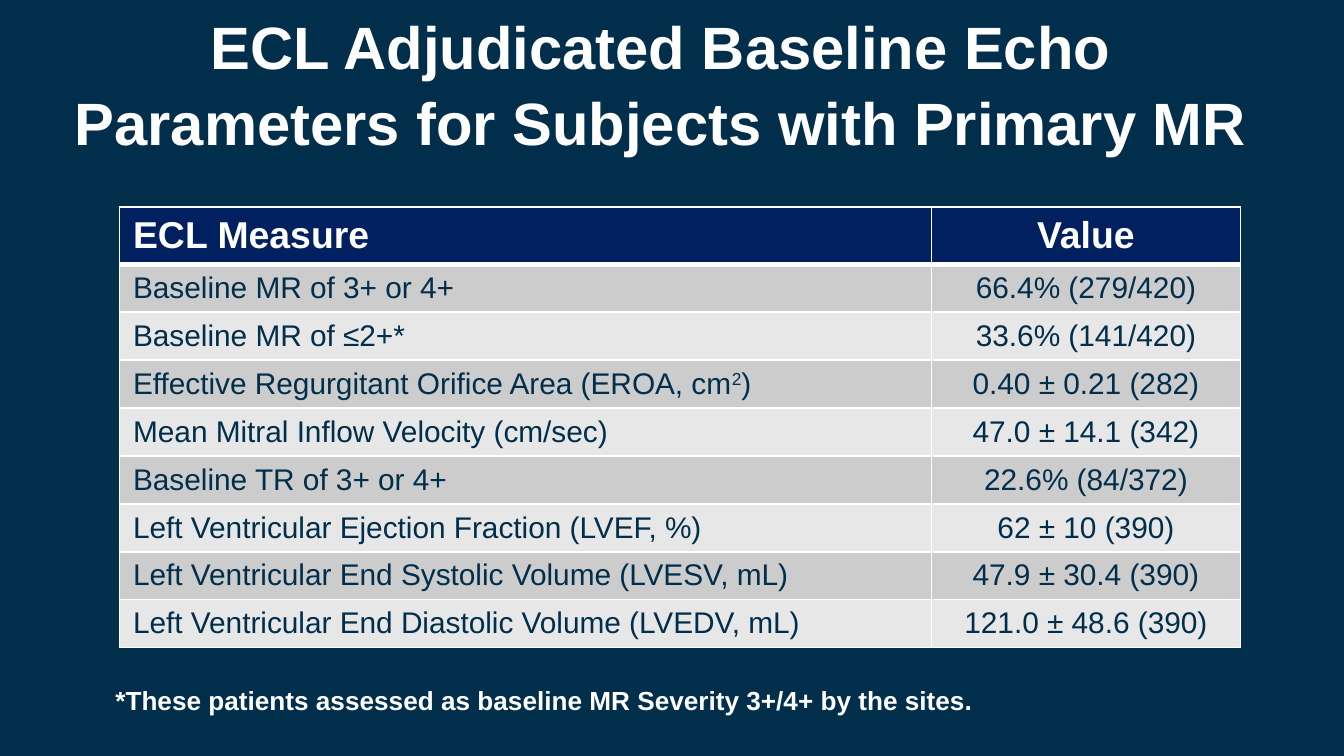
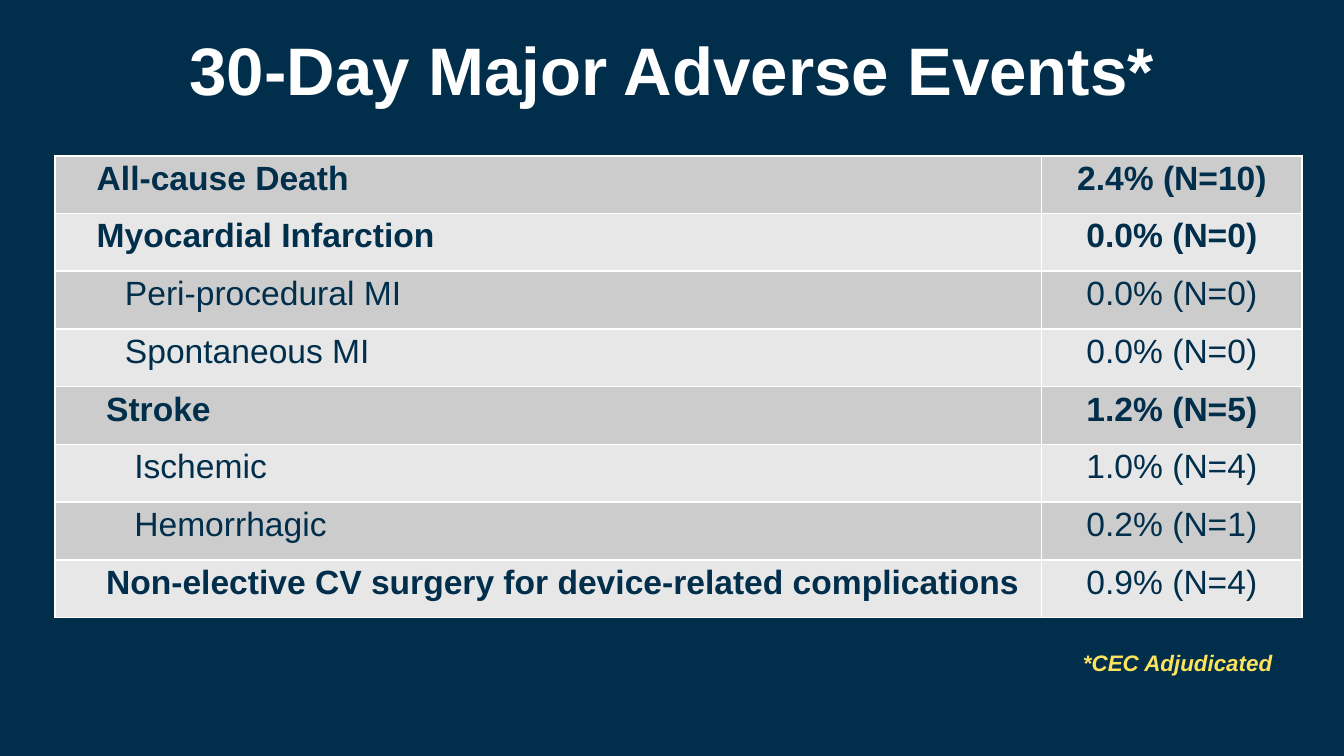
from dataclasses import dataclass
from lxml.etree import SubElement
from pptx import Presentation
from pptx.dml.color import RGBColor
from pptx.enum.text import MSO_ANCHOR, PP_ALIGN
from pptx.oxml.ns import qn
from pptx.util import Inches, Pt


@dataclass(frozen=True)
class Theme:
    """Colours, type sizes and slide size of the deck."""
    wide: float = 10
    high: float = 5.625
    face: str = "Arial"
    navy: str = "002E4B"
    head: str = "002060"
    white: str = "FFFFFF"
    gold: str = "FDE25E"
    bands: tuple = ("CCCCCC", "E7E7E7")
    title: int = 32
    large: int = 36
    top: int = 20
    body: int = 16
    event: int = 18
    note: int = 14
    small: int = 12


T = Theme()

MEASURES = [
    ("Baseline MR of 3+ or 4+", "66.4% (279/420)"),
    ("Baseline MR of ≤2+*", "33.6% (141/420)"),
    ("Effective Regurgitant Orifice Area (EROA, cm^2^)", "0.40 ± 0.21 (282)"),
    ("Mean Mitral Inflow Velocity (cm/sec)", "47.0 ± 14.1 (342)"),
    ("Baseline TR of 3+ or 4+", "22.6% (84/372)"),
    ("Left Ventricular Ejection Fraction (LVEF, %)", "62 ± 10 (390)"),
    ("Left Ventricular End Systolic Volume (LVESV, mL)", "47.9 ± 30.4 (390)"),
    ("Left Ventricular End Diastolic Volume (LVEDV, mL)", "121.0 ± 48.6 (390)"),
]

EVENTS = [
    ("All-cause Death", "2.4% (N=10)", 2.8, True, True),
    ("Myocardial Infarction", "0.0% (N=0)", 2.8, True, True),
    ("Peri-procedural MI", "0.0% (N=0)", 4.9, False, False),
    ("Spontaneous MI", "0.0% (N=0)", 4.9, False, False),
    ("Stroke", "1.2% (N=5)", 3.5, True, True),
    ("Ischemic", "1.0% (N=4)", 5.6, False, False),
    ("Hemorrhagic", "0.2% (N=1)", 5.6, False, False),
    ("Non-elective CV surgery for device-related complications",
     "0.9% (N=4)", 3.5, True, False),
]


def across(share):
    """Turn a percentage of the slide width into a length."""
    return Inches(T.wide * share / 100)


def down(share):
    """Turn a percentage of the slide height into a length."""
    return Inches(T.high * share / 100)


def place(x, y, w, h):
    """Turn four percentages into left, top, width and height."""
    return across(x), down(y), across(w), down(h)


def apply(thing, form):
    """Set each attribute named in a dict of format values."""
    for key, value in form.items():
        setattr(thing, key, value)


def write(frame, text, size, color, align=PP_ALIGN.LEFT, bold=False,
          italic=False, line=None):
    """Fill a text frame, raising the parts held between carets."""
    para = frame.paragraphs[0]
    apply(para, {"alignment": align, "line_spacing": line})
    for i, part in enumerate(text.split("^")):
        run = para.add_run()
        run.text = part
        apply(run.font, {"name": T.face, "size": Pt(size), "bold": bold,
                         "italic": italic})
        run.font.color.rgb = RGBColor.from_string(color)
        if i % 2:
            run._r.get_or_add_rPr().set("baseline", "30000")
    return para


def label(slide, text, area, size, color=T.white, wrap=True, **form):
    """Add a bold line of text in a box."""
    frame = slide.shapes.add_textbox(*place(*area)).text_frame
    frame.word_wrap = wrap
    write(frame, text, size, color, bold=True, **form)
    return frame


def title(slide, text, area, size):
    """Add the centred slide title."""
    frame = label(slide, text, area, size, align=PP_ALIGN.CENTER, line=1.05)
    apply(frame, {"margin_left": Inches(0.05), "margin_right": Inches(0.05)})


def edge(cell, foot=1):
    """Draw white borders, with a foot of the given width in points."""
    props = cell._tc.get_or_add_tcPr()
    for side, width in zip("LRTB", (1, 1, 1, foot)):
        line = SubElement(props, qn(f"a:ln{side}"), w=str(Pt(width)))
        fill = SubElement(line, qn("a:solidFill"))
        SubElement(fill, qn("a:srgbClr"), val=T.white)


def paint(cell, color, form, foot=1):
    """Give a cell its borders, fill and margins."""
    edge(cell, foot)
    cell.fill.solid()
    cell.fill.fore_color.rgb = RGBColor.from_string(color)
    apply(cell, form)


def table(slide, x, y, cols, rows):
    """Add a plain table from column and row shares."""
    area = place(x, y, sum(cols), sum(rows))
    grid = slide.shapes.add_table(len(rows), len(cols), *area).table
    apply(grid, {"first_row": False, "horz_banding": False})
    for col, share in zip(grid.columns, cols):
        col.width = across(share)
    for row, share in zip(grid.rows, rows):
        row.height = down(share)
    return grid


def echo(slide):
    """Build the slide of echo measures."""
    title(slide, "ECL Adjudicated Baseline Echo Parameters for Subjects "
          "with Primary MR", (4.2, 0, 90, 15.82), T.title)
    grid = table(slide, 8.9, 27.4, (60.4, 23),
                 [6.22] + [5.51] * len(MEASURES))
    form = {"vertical_anchor": MSO_ANCHOR.MIDDLE,
            "margin_top": Inches(0.045), "margin_bottom": Inches(0.045)}
    for r, texts in enumerate([("ECL Measure", "Value")] + MEASURES):
        top = r == 0
        for c, text in enumerate(texts):
            cell = grid.cell(r, c)
            paint(cell, T.head if top else T.bands[(r - 1) % 2], form,
                  3 if top else 1)
            write(cell.text_frame, text, T.top if top else T.body,
                  T.white if top else T.navy,
                  PP_ALIGN.CENTER if c else PP_ALIGN.LEFT, top)
    label(slide, "*These patients assessed as baseline MR Severity 3+/4+ "
          "by the sites.", (7.6, 89.6, 87.2, 6), T.note)


def events(slide):
    """Build the slide of adverse events."""
    title(slide, "30-Day Major Adverse Events*",
          (1.9, 2.31, 96.2, 12.62), T.large)
    grid = table(slide, 4.1, 20.6, (73.4, 19.4), [7.64] * len(EVENTS))
    form = {f"margin_{side}": Inches(0.03)
            for side in ("left", "right", "top", "bottom")}
    for r, (name, value, indent, strong, firm) in enumerate(EVENTS):
        left, right = grid.cell(r, 0), grid.cell(r, 1)
        for cell in (left, right):
            paint(cell, T.bands[r % 2], form)
        para = write(left.text_frame, name, T.event, T.navy, bold=strong)
        para._p.get_or_add_pPr().set("marL", str(across(indent)))
        write(right.text_frame, value, T.event, T.navy,
              PP_ALIGN.CENTER, firm)
    label(slide, "*CEC Adjudicated", (79.6, 85, 16.3, 5.33), T.small,
          T.gold, False, italic=True)


def main():
    """Build and save the deck."""
    deck = Presentation()
    apply(deck, {"slide_width": across(100), "slide_height": down(100)})
    for build in (echo, events):
        slide = deck.slides.add_slide(deck.slide_layouts[6])
        fill = slide.background.fill
        fill.solid()
        fill.fore_color.rgb = RGBColor.from_string(T.navy)
        build(slide)
    deck.save("out.pptx")


if __name__ == "__main__":
    main()
